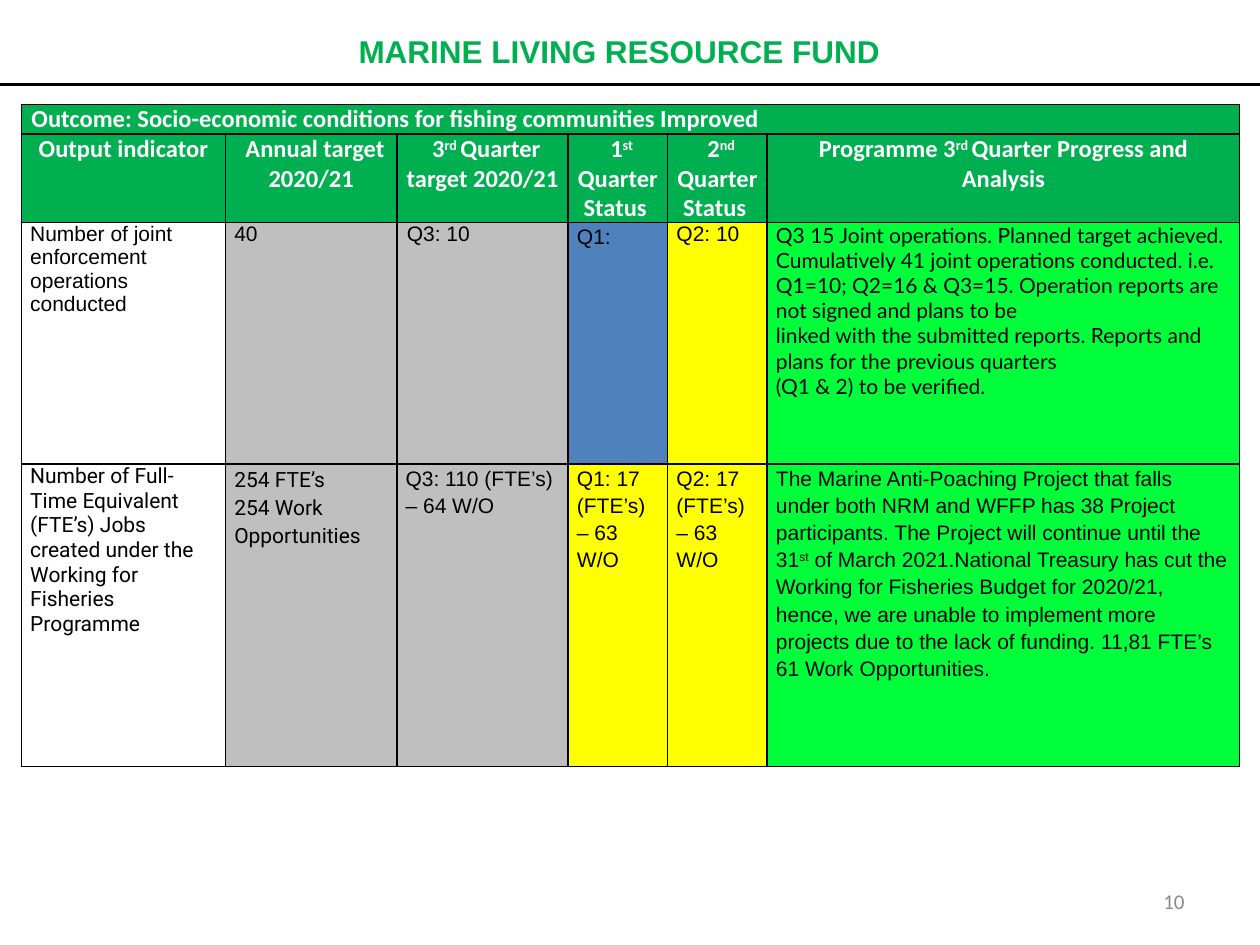
import pptx
import pptx.util
import pptx.dml.color
import pptx.enum.text
import pptx.enum.shapes
import pptx.oxml
import pptx.oxml.ns
from lxml import etree

Inches, Pt = pptx.util.Inches, pptx.util.Pt
ALIGN = pptx.enum.text.PP_ALIGN
ANCHOR = pptx.enum.text.MSO_ANCHOR
qn = pptx.oxml.ns.qn

GREEN, GREY, BLUE, YELLOW, LIME = "00B050", "BFBFBF", "4F81BD", "FFFF00", "00FF3B"


def colour(value):
    return pptx.dml.color.RGBColor.from_string(value)


def write(para, text, font, size, ink, bold=False, align=None):
    """Fill a paragraph; text between ^ marks is superscript."""
    para.alignment = align
    para.font.name, para.font.size, para.font.bold = font, Pt(size), bold
    para.font.color.rgb = colour(ink)
    for index, piece in enumerate(text.split("^")):
        span = para.add_run()
        span.text = piece
        if index % 2:
            span.font._element.set("baseline", "30000")


deck = pptx.Presentation()
deck.slide_width, deck.slide_height = Inches(10), Inches(7.5)
page = deck.slides.add_slide(deck.slide_layouts[5])

# Title
title = page.shapes.title
title.left, title.top = Inches(0), Inches(0.25)
title.width, title.height = Inches(9.83), Inches(0.58)
title.text_frame.vertical_anchor = ANCHOR.TOP
title.text_frame.margin_top = 0
write(title.text_frame.paragraphs[0], "MARINE LIVING RESOURCE FUND",
      "Arial", 18, GREEN, True, ALIGN.CENTER)

# Rule under the title
rule = page.shapes.add_connector(pptx.enum.shapes.MSO_CONNECTOR.STRAIGHT,
                                 Inches(0), Inches(0.67), Inches(10), Inches(0.67))
rule.line.color.rgb = colour("000000")
rule.line.width = Pt(2)
etree.SubElement(rule._element.spPr, qn("a:effectLst"))

# Page number
number = page.shapes.add_textbox(Inches(7.17), Inches(6.95), Inches(2.33), Inches(0.4))
number.text_frame.word_wrap = True
number.text_frame.vertical_anchor = ANCHOR.MIDDLE
write(number.text_frame.paragraphs[0], "10", "Calibri", 12, "898989", align=ALIGN.RIGHT)

# Table content: header texts with first-line indents
headers = [
    ("Output indicator", 0),
    ("Annual target 2020/21", 0.06),
    ("3^rd ^Quarter target 2020/21 ", 0.06),
    ("1^st^ Quarter Status ", 0.06),
    ("2^nd ^Quarter Status ", 0.06),
    ("Programme 3^rd ^Quarter Progress and Analysis", 0),
]
# Body cells: fill, font, line spacing, alignment, first-line indent, paragraphs
body = [
    [
        (None, "Arial", None, None, 0,
         ["Number of joint", "enforcement", "operations", "conducted"]),
        (GREY, "Arial", None, None, 0, ["40"]),
        (GREY, "Arial", None, ALIGN.JUSTIFY, 0.01, ["Q3: 10"]),
        (BLUE, "Arial", 1.15, None, 0, ["Q1:"]),
        (YELLOW, "Arial", None, ALIGN.JUSTIFY, 0, ["Q2: 10"]),
        (LIME, "Lato", None, None, 0, [
            "Q3 15 Joint operations. Planned target achieved. "
            "Cumulatively 41 joint operations conducted. i.e.",
            "Q1=10; Q2=16 & Q3=15. Operation reports are not signed and plans to be",
            "linked with the submitted reports. Reports and plans for the previous quarters",
            "(Q1 & 2) to be verified."]),
    ],
    [
        (None, "Roboto", None, None, 0, [
            "Number of Full-Time Equivalent (FTE’s) Jobs created under the "
            "Working for Fisheries Programme"]),
        (GREY, "Roboto", 1.15, None, 0, ["254 FTE’s", "254 Work Opportunities"]),
        (GREY, "Arial", 1.15, None, 0, ["Q3: 110 (FTE’s) – 64 W/O"]),
        (YELLOW, "Arial", 1.15, None, 0, ["Q1: 17 (FTE’s) – 63 W/O"]),
        (YELLOW, "Arial", 1.15, None, 0, ["Q2: 17 (FTE’s) – 63 W/O"]),
        (LIME, "Arial", 1.15, None, 0, [
            "The Marine Anti-Poaching Project that falls under both NRM and WFFP has "
            "38 Project participants. The Project will continue until the 31^st^ of March "
            "2021.National Treasury has cut the Working for Fisheries Budget for 2020/21, "
            "hence, we are unable to implement more projects due to the lack of funding. "
            "11,81 FTE’s 61 Work Opportunities."]),
    ],
]

# Table grid
widths = [1.62, 1.36, 1.36, 0.79, 0.79, 3.75]
heights = [0.22, 0.67, 1.92, 2.4]
table = page.shapes.add_table(len(heights), len(widths), Inches(0.17), Inches(0.83),
                              Inches(sum(widths)), Inches(sum(heights))).table
table.horz_banding = False
for column, width in zip(table.columns, widths):
    column.width = Inches(width)
for row, height in zip(table.rows, heights):
    row.height = Inches(height)

# Margins and black borders on every cell
for cell in table.iter_cells():
    cell.margin_left = cell.margin_right = Inches(0.07)
    cell.margin_top = cell.margin_bottom = 0
    for side in ("lnL", "lnR", "lnT", "lnB"):
        border = etree.SubElement(cell._tc.get_or_add_tcPr(), qn("a:" + side), w=str(Pt(1)))
        fill = etree.SubElement(border, qn("a:solidFill"))
        etree.SubElement(fill, qn("a:srgbClr"), val="000000")
    cell.fill.solid()
    cell.fill.fore_color.rgb = colour(GREEN)

# Outcome row and header row
table.cell(0, 0).merge(table.cell(0, len(widths) - 1))
para = table.cell(0, 0).text_frame.paragraphs[0]
write(para, "Outcome: Socio-economic conditions for fishing communities Improved",
      "Calibri", 14, "FFFFFF", True, ALIGN.JUSTIFY)
para._p.get_or_add_pPr().set("indent", str(Inches(0.01)))
for index, (text, indent) in enumerate(headers):
    para = table.cell(1, index).text_frame.paragraphs[0]
    write(para, text, "Calibri", 14, "FFFFFF", True, ALIGN.CENTER)
    para._p.get_or_add_pPr().set("indent", str(Inches(indent)))

# Body rows
for row_index, row in enumerate(body, start=2):
    for index, (shade, font, spacing, align, indent, texts) in enumerate(row):
        cell = table.cell(row_index, index)
        if shade:
            cell.fill.fore_color.rgb = colour(shade)
        else:
            cell.fill.background()
        for position, text in enumerate(texts):
            frame = cell.text_frame
            para = frame.add_paragraph() if position else frame.paragraphs[0]
            write(para, text, font, 12, "000000", align=align)
            para.line_spacing = spacing
            para._p.get_or_add_pPr().set("indent", str(Inches(indent)))

deck.save("out.pptx")
